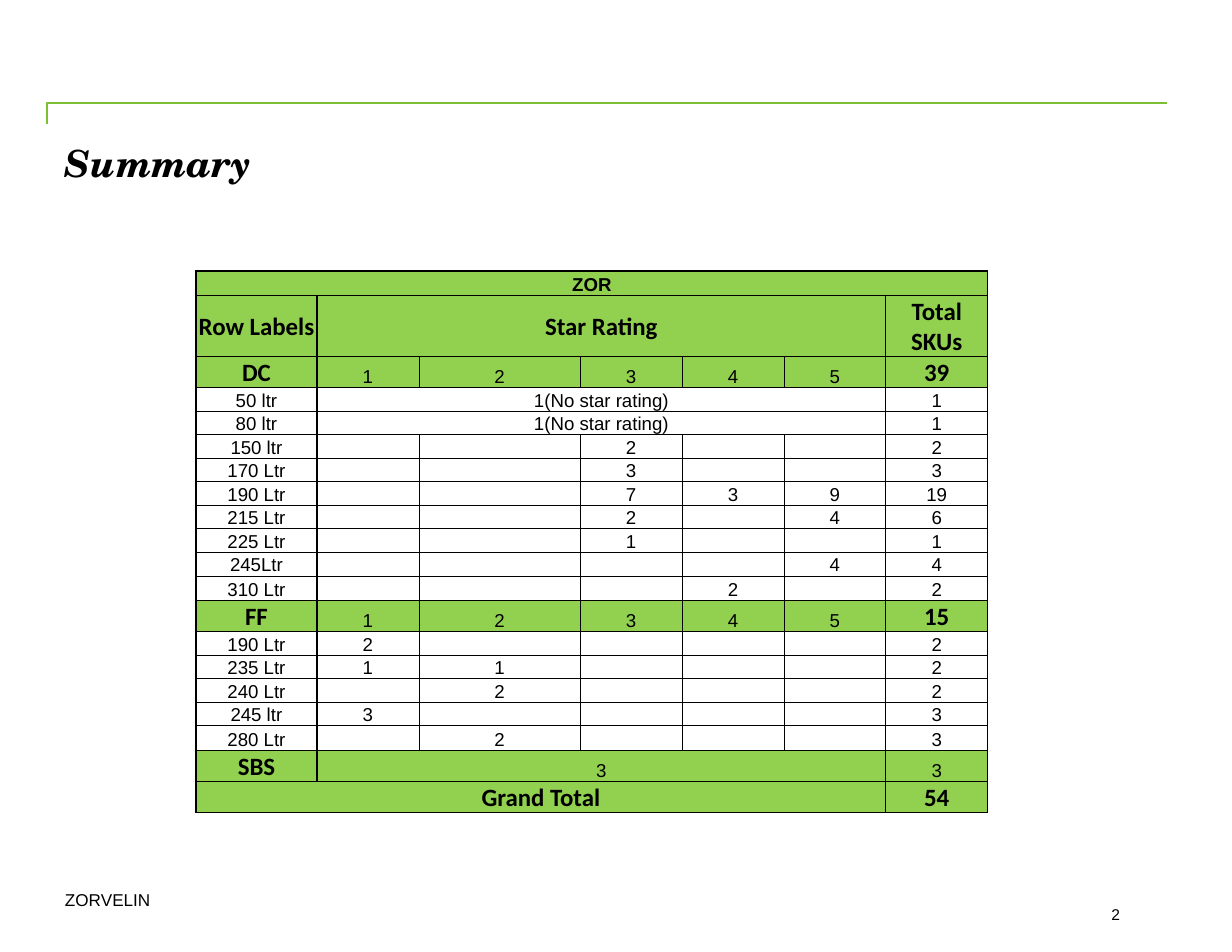
from dataclasses import dataclass

from lxml import etree
from pptx import Presentation
from pptx.dml.color import RGBColor
from pptx.enum import text
from pptx.oxml import ns
from pptx.util import Inches, Pt


@dataclass(frozen=True)
class Theme:
    ink: str = "000000"
    rule: str = "7CBE34"
    band: str = "92D050"
    body_font: str = "Arial"
    label_font: str = "Calibri"
    title_font: str = "TeX Gyre Schola"
    title_size: int = 24
    label_size: int = 16
    cell_size: int = 12
    footer_size: int = 11
    number_size: int = 10
    thick: float = 1
    thin: float = 0.5


THEME = Theme()
STARS = ["1", "2", "3", "4", "5"]
MERGED = None
NO_STAR = ["1(No star rating)"] + [MERGED] * 4
ROWS = [
    ["ZOR"] + [MERGED] * 6,
    ["Row Labels", "Star Rating"] + [MERGED] * 4 + ["Total SKUs"],
    ["DC", *STARS, "39"],
    ["50 ltr", *NO_STAR, "1"],
    ["80 ltr", *NO_STAR, "1"],
    ["150 ltr", "", "", "2", "", "", "2"],
    ["170 Ltr", "", "", "3", "", "", "3"],
    ["190 Ltr", "", "", "7", "3", "9", "19"],
    ["215 Ltr", "", "", "2", "", "4", "6"],
    ["225 Ltr", "", "", "1", "", "", "1"],
    ["245Ltr", "", "", "", "", "4", "4"],
    ["310 Ltr", "", "", "", "2", "", "2"],
    ["FF", *STARS, "15"],
    ["190 Ltr", "2", "", "", "", "", "2"],
    ["235 Ltr", "1", "1", "", "", "", "2"],
    ["240 Ltr", "", "2", "", "", "", "2"],
    ["245 ltr", "3", "", "", "", "", "3"],
    ["280 Ltr", "", "2", "", "", "", "3"],
    ["SBS", "3"] + [MERGED] * 4 + ["3"],
    ["Grand Total"] + [MERGED] * 5 + ["54"],
]
BANDS = {0, 1, 2, 12, 18, 19}
GRAND_TOTAL = len(ROWS) - 1
COLUMN_WIDTHS = [1.08, 0.91, 1.44, 0.91, 0.91, 0.91, 0.91]


def style_font(font, name, size, bold=False, italic=False):
    font.name, font.size = name, Pt(size)
    font.bold, font.italic = bold, italic
    font.color.rgb = RGBColor.from_string(THEME.ink)


def add_label(page, box, words, name, size, align=text.PP_ALIGN.LEFT, strong=False):
    frame = page.shapes.add_textbox(*map(Inches, box)).text_frame
    frame.word_wrap = True
    frame.margin_left = frame.margin_right = frame.margin_top = frame.margin_bottom = 0
    frame.text = words
    para = frame.paragraphs[0]
    para.alignment = align
    style_font(para.runs[0].font, name, size, strong, strong)


def add_header_rule(page, box):
    left, top, width, height = map(Inches, box)
    builder = page.shapes.build_freeform(left, top + height)
    builder.add_line_segments([(left, top), (left + width, top)], close=False)
    rule = builder.convert_to_shape()
    rule.shadow.inherit = False
    rule.fill.background()
    rule.line.color.rgb = RGBColor.from_string(THEME.rule)
    rule.line.width = Pt(THEME.thick)


def set_border(cell, side, width):
    line = etree.SubElement(cell._tc.get_or_add_tcPr(), ns.qn(f"a:ln{side}"), w=str(Pt(width)))
    fill = etree.SubElement(line, ns.qn("a:solidFill"))
    etree.SubElement(fill, ns.qn("a:srgbClr"), val=THEME.ink)


def row_edge(edge):
    return THEME.thick if {edge - 1, edge} & BANDS else THEME.thin


def column_edge(row, edge):
    heavy = edge in (0, 7) or (edge in (1, 6) and row != GRAND_TOTAL)
    return THEME.thick if heavy else THEME.thin


def row_height(row):
    if row == 1:
        return 0.5
    if row == 0 or (row not in BANDS and row + 1 in BANDS):
        return 0.22
    return 0.26 if row in BANDS else 0.21


def span_end(values, column):
    end = column + 1
    while end < len(values) and values[end] is MERGED:
        end += 1
    return end


def fill_cell(cell, words, row):
    cell.margin_left = cell.margin_right = cell.margin_top = Inches(0.01)
    cell.margin_bottom = 0
    cell.vertical_anchor = text.MSO_ANCHOR.MIDDLE if row == 1 else text.MSO_ANCHOR.BOTTOM
    para = cell.text_frame.paragraphs[0]
    para.alignment = text.PP_ALIGN.CENTER
    if words:
        para.text = words
        label = row in BANDS and row > 0 and len(words) > 1
        name = THEME.label_font if label else THEME.body_font
        size = THEME.label_size if label else THEME.cell_size
        style_font(para.runs[0].font, name, size, label or row == 0)
    else:
        etree.SubElement(para._p, ns.qn("a:endParaRPr"), sz=str(THEME.cell_size * 100))


def add_rating_table(page, box):
    frame = page.shapes.add_table(len(ROWS), len(COLUMN_WIDTHS), *map(Inches, box))
    table = frame.table
    table.first_row = table.horz_banding = False
    for column, width in zip(table.columns, COLUMN_WIDTHS):
        column.width = Inches(width)
    for row, values in enumerate(ROWS):
        table.rows[row].height = Inches(row_height(row))
        for column, words in enumerate(values):
            cell = table.cell(row, column)
            fill_cell(cell, words, row)
            if words is not MERGED:
                end = span_end(values, column)
                if end > column + 1:
                    cell.merge(table.cell(row, end - 1))
                set_border(cell, "L", column_edge(row, column))
                set_border(cell, "R", column_edge(row, end))
            set_border(cell, "T", row_edge(row))
            set_border(cell, "B", row_edge(row + 1))
            if row in BANDS:
                cell.fill.solid()
                cell.fill.fore_color.rgb = RGBColor.from_string(THEME.band)
            else:
                cell.fill.background()


def add_footer(page, box):
    left, top, width, height = box
    add_label(page, (left, top, 0.95, height), "ZORVELIN", THEME.body_font, THEME.footer_size)
    add_label(page, (left + width - 0.17, top + 0.14, 0.17, 0.17), "2",
              THEME.body_font, THEME.number_size, text.PP_ALIGN.RIGHT)


def main():
    deck = Presentation()
    deck.slide_width, deck.slide_height = Inches(11), Inches(8.5)
    page = deck.slides.add_slide(deck.slide_layouts[6])
    add_header_rule(page, (0.42, 0.92, 10, 0.19))
    add_footer(page, (0.58, 7.94, 9.42, 0.19))
    add_label(page, (0.58, 1.25, 9.84, 1), "Summary", THEME.title_font, THEME.title_size, strong=True)
    add_rating_table(page, (1.75, 2.42, 7.08, 4.84))
    deck.save("out.pptx")


if __name__ == "__main__":
    main()
